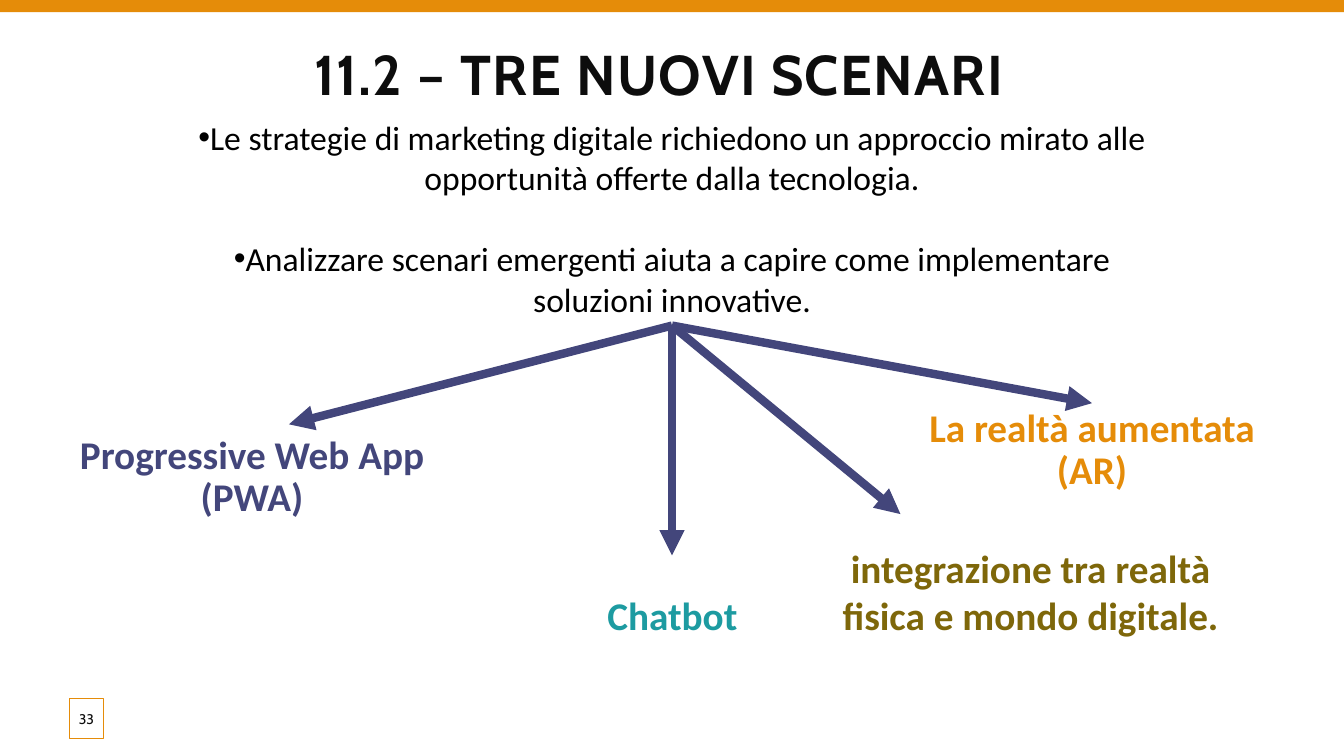
from pptx import Presentation
from pptx import util as u
from pptx.dml.color import RGBColor
from pptx.enum import shapes, text
from pptx.oxml.ns import qn
from lxml import etree

WIDE, HIGH = u.Inches(13.33), u.Inches(7.5)
INK, BLACK, WHITE = "0D0D0D", "000000", "FFFFFF"
GOLD, NAVY, TEAL, OLIVE = "E58C09", "43467B", "1D9BA1", "7E670A"
MID = text.PP_ALIGN.CENTER
HUB = (50, 43.07)
TIPS = [(81.25, 53.33), (50, 73.47), (21.5, 56.13), (67, 68)]
LABELS = [
    ("Progressive Web App (PWA)", NAVY, (4.5, 56.93, 28.5, 28.27)),
    ("Chatbot", TEAL, (35.78, 78.27, 28.5, 6.13)),
    ("La realtà aumentata (AR)", GOLD, (67, 53.33, 28.5, 2.93)),
]
POINTS = [
    "Le strategie di marketing digitale richiedono un approccio mirato alle "
    "opportunità offerte dalla tecnologia.",
    "Analizzare scenari emergenti aiuta a capire come implementare "
    "soluzioni innovative.",
]


def paint(color, code):
    """Set a colour from a hex string."""
    color.rgb = RGBColor.from_string(code)


def spot(*shares):
    """Turn alternating width and height percentages into lengths."""
    return [int(s * (HIGH if i % 2 else WIDE) / 100) for i, s in enumerate(shares)]


def move(shape, area):
    """Place a shape on an area given in percentages."""
    shape.left, shape.top, shape.width, shape.height = spot(*area)


def style(para, size, code, face="Calibri", bold=False, align=MID):
    """Set the alignment and font of a paragraph."""
    para.alignment = align
    font = para.font
    font.name, font.size, font.bold = face, u.Pt(size), bold
    paint(font.color, code)


def mark(para, sign=None):
    """Give a paragraph a bullet sign, or none, without an indent."""
    props = para._p.get_or_add_pPr()
    props.set("marL", "0")
    props.set("indent", "0")
    if sign:
        etree.SubElement(props, qn("a:buFont")).set("typeface", "Arial")
        etree.SubElement(props, qn("a:buChar")).set("char", sign)
    else:
        etree.SubElement(props, qn("a:buNone"))


def frame(shape, area):
    """Place a text shape and return its top-anchored, wrapping frame."""
    move(shape, area)
    body = shape.text_frame
    body.word_wrap = True
    body.auto_size = text.MSO_AUTO_SIZE.NONE
    body.vertical_anchor = text.MSO_ANCHOR.TOP
    return body


def head(shape, words):
    """Fill the title."""
    para = frame(shape, (22.65, 4.53, 88.67, 14.93)).paragraphs[0]
    run = para.add_run()
    run.text = words
    style(para, 40, INK, "Cabin", True, text.PP_ALIGN.LEFT)
    run.font._element.set("spc", "100")


def label(shape, words, code, area, pitch=0.9):
    """Fill a bold coloured label."""
    para = frame(shape, area).paragraphs[0]
    para.text = words
    mark(para)
    style(para, 28, code, bold=True)
    para.line_spacing, para.space_before = pitch, u.Pt(0)


def bullets(shape, area):
    """Fill the centred list of points."""
    body = frame(shape, area)
    for i, words in enumerate(POINTS):
        para = body.add_paragraph() if i else body.paragraphs[0]
        para.text = words
        mark(para, "•")
        style(para, 24, BLACK)
        para.space_before = u.Pt(29 * i)


def block(slide, area, fill, line=None):
    """Add a flat rectangle."""
    box = slide.shapes.add_shape(shapes.MSO_SHAPE.RECTANGLE, *spot(*area))
    box.shadow.inherit = False
    box.fill.solid()
    paint(box.fill.fore_color, fill)
    if line:
        paint(box.line.color, line)
        box.line.width = u.Pt(0.75)
    else:
        box.line.fill.background()
    return box


def badge(slide, words):
    """Add the framed page number."""
    box = block(slide, (5.18, 92.4, 2.5, 5.33), WHITE, GOLD)
    tint = box._element.spPr.find(qn("a:solidFill"))[0]
    etree.SubElement(tint, qn("a:alpha")).set("val", "82000")
    body = box.text_frame
    body.margin_left = body.margin_right = 0
    body.vertical_anchor = text.MSO_ANCHOR.MIDDLE
    body.text = words
    style(body.paragraphs[0], 10, INK, "Cabin")


def arrow(slide, tip):
    """Add a thick arrow from the hub to a tip."""
    link = slide.shapes.add_connector(
        shapes.MSO_CONNECTOR.STRAIGHT, *spot(*HUB, *tip))
    paint(link.line.color, NAVY)
    link.line.width = u.Pt(6)
    etree.SubElement(link.line._get_or_add_ln(), qn("a:tailEnd")).set("type", "triangle")
    etree.SubElement(link._element.spPr, qn("a:effectLst"))


def main():
    """Build the slide and save it."""
    deck = Presentation()
    deck.slide_width, deck.slide_height = WIDE, HIGH
    slide = deck.slides.add_slide(deck.slide_layouts[4])
    title, *bodies, last = slide.placeholders
    block(slide, (0, 0, 100, 1.6), GOLD)
    head(title, "11.2 – TRE NUOVI SCENARI")
    for shape, item in zip(bodies, LABELS):
        label(shape, *item)
    badge(slide, "33")
    bullets(last, (12.5, 14.8, 75, 28.27))
    for tip in TIPS:
        arrow(slide, tip)
    label(slide.shapes.add_textbox(0, 0, 0, 0),
          "integrazione tra realtà fisica e mondo digitale.",
          OLIVE, (61.67, 71.33, 30, 13.87), 1)
    deck.save("out.pptx")


if __name__ == "__main__":
    main()
